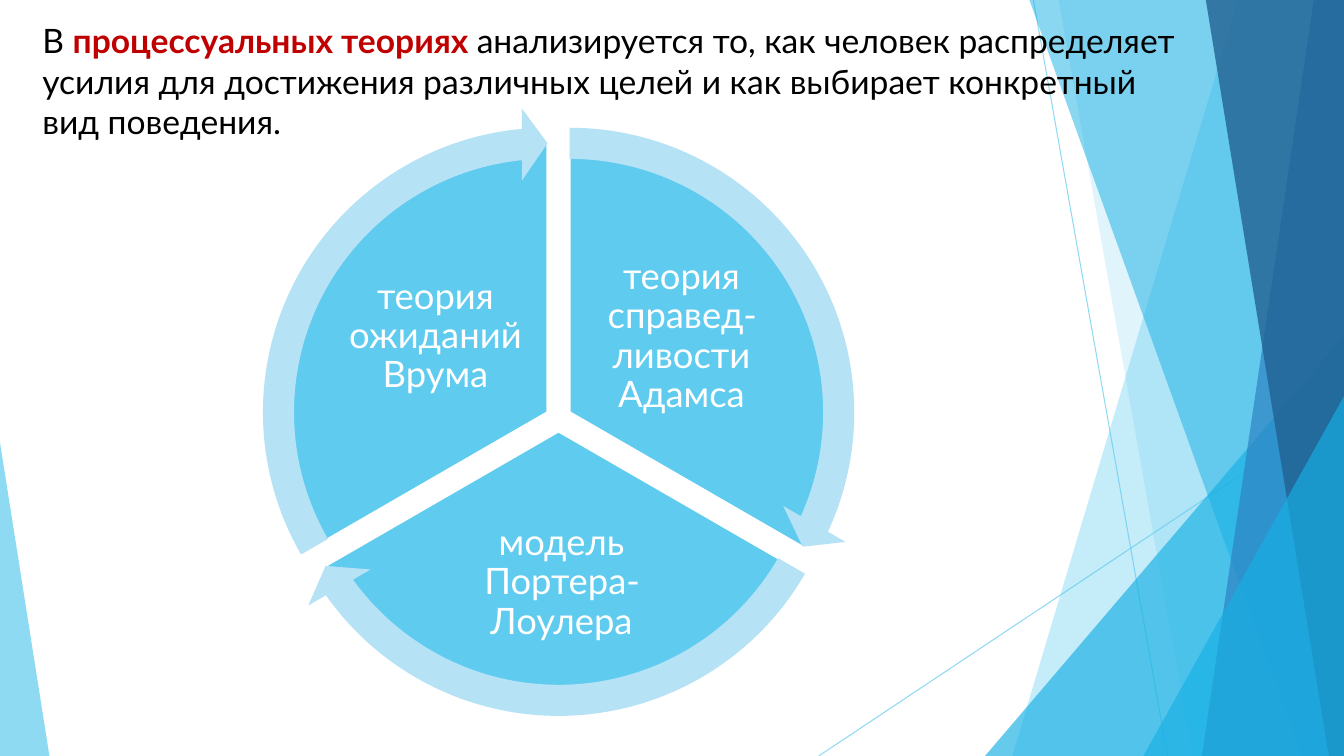
import pptx
import pptx.util
import pptx.dml.color
import pptx.enum.shapes
import pptx.enum.text
import pptx.oxml.ns
from lxml import etree

Inches = pptx.util.Inches
Pt = pptx.util.Pt
SHAPE = pptx.enum.shapes.MSO_SHAPE
ALIGN = pptx.enum.text.PP_ALIGN
ANCHOR = pptx.enum.text.MSO_ANCHOR

WIDTH, HEIGHT = 13.33, 7.5
FONT = "Lato"
SKY, CYAN, PALE = "5FCBEF", "17B0E4", "B6E2F6"

HEADLINE = [
    ("В ", "000000", False),
    ("процессуальных теориях ", "C00000", True),
    ("анализируется то, как человек распределяет усилия для достижения "
     "различных целей и как выбирает конкретный вид поведения.", "000000", False),
]
HEADLINE_BOX = (0.32, 0.15, 11.45, 1.31)

RAYS = [((10.25, 0), (11.58, HEIGHT)), ((WIDTH, 4.03), (8.12, HEIGHT))]

BANDS_BACK = [
    (12.28, 10.04, SKY, 36),
    (10.5, 11.83, SKY, 20),
]
BANDS_FRONT = [
    (10.21, 12.91, CYAN, 50),
    (13.03, 11.92, "2E83C3", 70),
    (11.96, 13.18, "226292", 80),
]
TRIANGLE_BACK = (9.77, 3.33, 3.56, 1, CYAN, 66)
TRIANGLE_FRONT = (11.34, 3.93, 1.99, 1, CYAN, 66)
TRIANGLE_LEFT = (0, 4.39, 0.49, 0, SKY, 70)

PIE_SIZE, ARROW_SIZE = 5.38, 6.05
THEORIES = [
    ("теория справед-ливости Адамса", (2.96, 1.4), (162, 18),
     (14.725, 161.994), (5.8, 2.54, 1.92, 1.6)),
    ("модель Портера-Лоулера", (2.85, 1.59), (18, 90),
     (86.72, 18.005), (4.13, 5.08, 2.88, 1.41)),
    ("теория ожиданий Врума", (2.74, 1.4), (90, 162),
     (158.73, 90), (3.36, 2.54, 1.92, 1.6)),
]


def rgb(value):
    return pptx.dml.color.RGBColor.from_string(value)


def apply(target, values):
    for name, value in values.items():
        setattr(target, name, value)


def paint(fill, color, opacity=100):
    fill.solid()
    fill.fore_color.rgb = rgb(color)
    if opacity < 100:
        holder = fill._xPr.find(".//" + pptx.oxml.ns.qn("a:srgbClr"))
        alpha = etree.SubElement(holder, pptx.oxml.ns.qn("a:alpha"))
        alpha.set("val", str(opacity * 1000))


def finish(shape, color, opacity=100):
    shape.shadow.inherit = False
    paint(shape.fill, color, opacity)
    shape.line.fill.background()


def add_preset(page, kind, place, adjustments, color, opacity=100):
    shape = page.shapes.add_shape(kind, *map(Inches, place))
    for index, value in enumerate(adjustments):
        shape.adjustments[index] = value
    finish(shape, color, opacity)
    return shape


def add_ray(page, start, end):
    ray = page.shapes.add_connector(
        pptx.enum.shapes.MSO_CONNECTOR.STRAIGHT, *map(Inches, start + end))
    ray.line.width = Pt(0.75)
    paint(ray.line.fill, SKY, 70)
    etree.SubElement(ray._element.spPr, pptx.oxml.ns.qn("a:effectLst"))


def add_band(page, top_x, bottom_x, color, opacity):
    corners = [(WIDTH, 0), (WIDTH, HEIGHT), (bottom_x, HEIGHT)]
    builder = page.shapes.build_freeform(Inches(top_x), 0)
    builder.add_line_segments([(Inches(x), Inches(y)) for x, y in corners])
    finish(builder.convert_to_shape(), color, opacity)


def add_triangle(page, left, top, width, apex, color, opacity):
    place = (left, top, width, HEIGHT - top)
    add_preset(page, SHAPE.ISOSCELES_TRIANGLE, place, [apex], color, opacity)


def add_background(page):
    for start, end in RAYS:
        add_ray(page, start, end)
    for band in BANDS_BACK:
        add_band(page, *band)
    add_triangle(page, *TRIANGLE_BACK)
    for band in BANDS_FRONT:
        add_band(page, *band)
    for triangle in (TRIANGLE_FRONT, TRIANGLE_LEFT):
        add_triangle(page, *triangle)


def add_headline(page):
    title = page.shapes.title
    page.shapes._spTree.append(title._element)
    apply(title, dict(zip(("left", "top", "width", "height"), map(Inches, HEADLINE_BOX))))
    apply(title.text_frame, {"word_wrap": True, "vertical_anchor": ANCHOR.TOP,
                             "auto_size": pptx.enum.text.MSO_AUTO_SIZE.NONE})
    para = title.text_frame.paragraphs[0]
    para.alignment = ALIGN.LEFT
    for text, color, bold in HEADLINE:
        span = para.add_run()
        span.text = text
        apply(span.font, {"name": FONT, "size": Pt(24), "bold": bold})
        span.font.color.rgb = rgb(color)


def add_label(page, text, place):
    box = page.shapes.add_textbox(*map(Inches, place))
    margins = ("margin_left", "margin_top", "margin_right", "margin_bottom")
    apply(box.text_frame, dict.fromkeys(margins, Inches(0.04)))
    apply(box.text_frame, {"word_wrap": True, "vertical_anchor": ANCHOR.MIDDLE})
    para = box.text_frame.paragraphs[0]
    apply(para, {"alignment": ALIGN.CENTER, "line_spacing": 0.9})
    span = para.add_run()
    span.text = text
    apply(span.font, {"name": FONT, "size": Pt(26)})
    span.font.color.rgb = rgb("FFFFFF")


def add_cycle(page):
    for text, corner, angles, _, label_place in THEORIES:
        sector = add_preset(page, SHAPE.PIE, corner + (PIE_SIZE, PIE_SIZE), angles, SKY)
        paint(sector.line.fill, "FFFFFF")
        sector.line.width = Pt(1.5)
        add_label(page, text, label_place)
    overhang = (ARROW_SIZE - PIE_SIZE) / 2
    for _, (left, top), _, (head, tail), _ in THEORIES:
        place = (left - overhang, top - overhang, ARROW_SIZE, ARROW_SIZE)
        add_preset(page, SHAPE.CIRCULAR_ARROW, place,
                   (0.051, 3.275, head, tail, 0.059), PALE)


def main():
    deck = pptx.Presentation()
    apply(deck, {"slide_width": Inches(WIDTH), "slide_height": Inches(HEIGHT)})
    page = deck.slides.add_slide(deck.slide_layouts.get_by_name("Title Only"))
    add_background(page)
    add_headline(page)
    add_cycle(page)
    deck.save("out.pptx")


if __name__ == "__main__":
    main()
